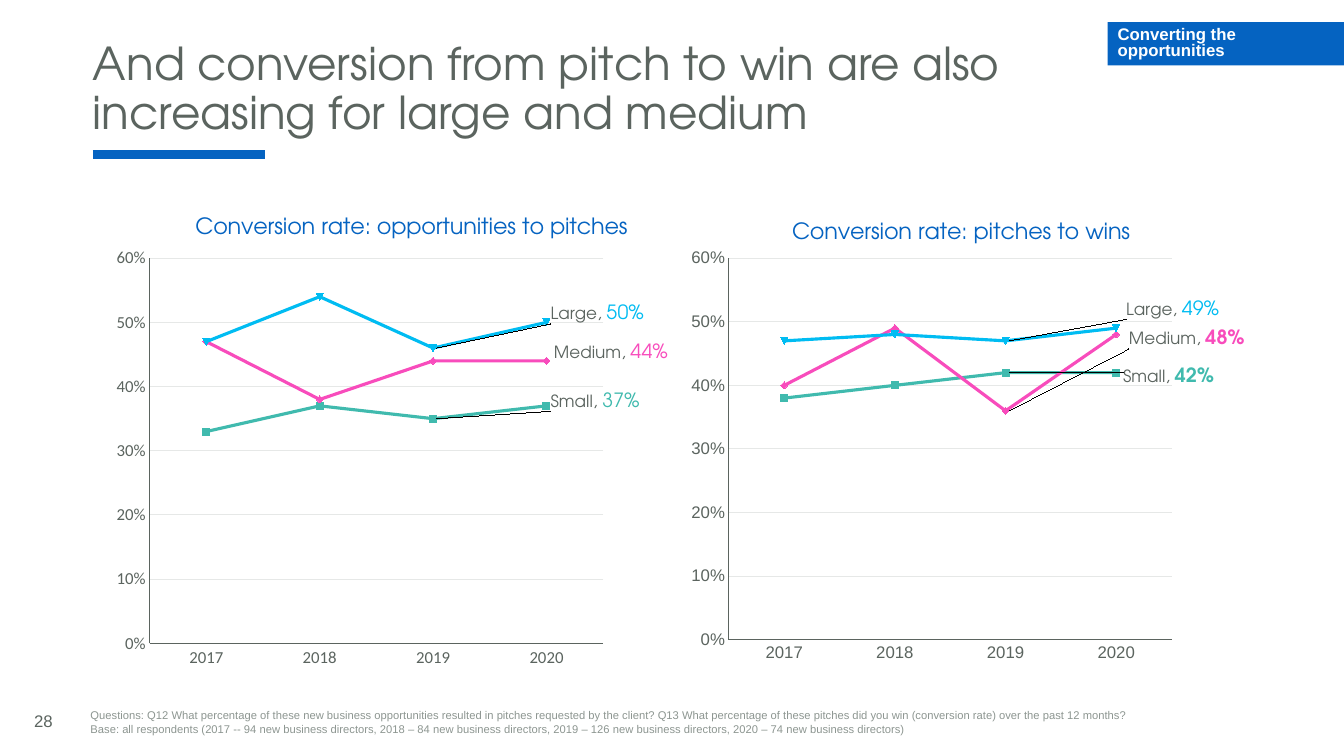
from dataclasses import dataclass

from lxml.etree import SubElement
from pptx import Presentation
from pptx.chart.chart import Chart
from pptx.chart.data import CategoryChartData
from pptx.dml.color import RGBColor
from pptx.enum.chart import XL_CHART_TYPE, XL_LABEL_POSITION, XL_TICK_MARK
from pptx.enum.shapes import MSO_CONNECTOR
from pptx.enum.text import MSO_ANCHOR, MSO_AUTO_SIZE, PP_ALIGN
from pptx.oxml import parse_xml
from pptx.oxml.ns import nsdecls, qn
from pptx.shapes.base import BaseShape
from pptx.slide import Slide
from pptx.text.text import TextFrame, _Paragraph
from pptx.util import Cm, Pt


@dataclass(frozen=True)
class Theme:
    blue: str = "0563C1"
    gray: str = "5B645F"
    pale_gray: str = "8D9691"
    grid: str = "E6E8E7"
    white: str = "FFFFFF"
    teal: str = "40BAAE"
    pink: str = "F84CBC"
    cyan: str = "00BCF2"
    display: str = "TeX Gyre Adventor"
    plain: str = "Arial"
    chart: str = "Calibri"
    title_size: float = 32.4
    heading_size: float = 16
    value_size: float = 14
    text_size: float = 12
    note_size: float = 8


THEME = Theme()


@dataclass(frozen=True)
class Trend:
    name: str
    color: str
    values: tuple[float, ...]
    point: int  # index of the labelled point
    offset: tuple[float, float]  # label shift, as a share of the chart
    bold: bool = False


@dataclass(frozen=True)
class Panel:
    title: str
    title_at: tuple[float, float]
    box: tuple[float, float, float, float]
    plot: tuple[float, float, float, float]
    axis_font: str
    trends: tuple[Trend, ...]


YEARS = ("2017", "2018", "2019", "2020")
PANELS = (
    Panel("Conversion rate: pitches to wins", (0.2, 0.03), (16.94, 5.08, 14.6, 11.99),
          (0.098, 0.119, 0.764, 0.802), THEME.plain, (
              Trend("Small", THEME.teal, (0.38, 0.4, 0.42, 0.42), 2, (0.19, 0.01), True),
              Trend("Medium", THEME.pink, (0.4, 0.49, 0.36, 0.48), 2, (0.2, -0.15), True),
              Trend("Large", THEME.cyan, (0.47, 0.48, 0.47, 0.49), 2, (0.195, -0.065)))),
    Panel("Conversion rate: opportunities to pitches", (0.17, 0.02), (2.34, 5.08, 14.6, 12.09),
          (0.098, 0.118, 0.783, 0.803), THEME.chart, (
              Trend("Small", THEME.teal, (0.33, 0.37, 0.35, 0.37), 2, (0.19, -0.035)),
              Trend("Medium", THEME.pink, (0.47, 0.38, 0.44, 0.44), 3, (0, -0.015)),
              Trend("Large", THEME.cyan, (0.47, 0.54, 0.46, 0.5), 2, (0.19, -0.07)))),
)
FOOTNOTES = (
    "Questions: Q12 What percentage of these new business opportunities resulted in pitches "
    "requested by the client? Q13 What percentage of these pitches did you win (conversion rate) "
    "over the past 12 months?",
    "Base: all respondents (2017 -- 94 new business directors, 2018 – 84 new business directors, "
    "2019 – 126 new business directors, 2020 – 74 new business directors)",
)


def set_font(font, *, size: float, color: str, name: str, bold: bool = False) -> None:
    font.size, font.name, font.bold = Pt(size), name, bold
    font.color.rgb = RGBColor.from_string(color)


def add_text(paragraph: _Paragraph, text: str, *, size: float = THEME.text_size,
             color: str = THEME.gray, name: str = THEME.plain, bold: bool = False) -> None:
    run = paragraph.add_run()
    run.text = text
    set_font(run.font, size=size, color=color, name=name, bold=bold)


def place(shape: BaseShape, left: float, top: float, width: float, height: float) -> None:
    shape.left, shape.top, shape.width, shape.height = Cm(left), Cm(top), Cm(width), Cm(height)


def prepare_frame(frame: TextFrame, anchor: MSO_ANCHOR, spacing: float = 1) -> _Paragraph:
    frame.word_wrap, frame.auto_size = True, MSO_AUTO_SIZE.NONE
    frame.vertical_anchor = anchor
    paragraph = frame.paragraphs[0]
    paragraph.alignment, paragraph.line_spacing = PP_ALIGN.LEFT, spacing
    paragraph.space_before = Pt(0)
    return paragraph


def manual_layout(**settings: str | float):
    parts = "".join(f'<c:{key} val="{value}"/>' for key, value in settings.items())
    return parse_xml(f'<c:layout {nsdecls("c")}><c:manualLayout>{parts}</c:manualLayout></c:layout>')


def set_layout(parent, position: int, **settings: str | float) -> None:
    for old in parent.findall(qn("c:layout")):
        parent.remove(old)
    parent.insert(position, manual_layout(**settings))


def style_axes(chart: Chart, font_name: str) -> None:
    for axis in (chart.category_axis, chart.value_axis):
        axis.major_tick_mark = axis.minor_tick_mark = XL_TICK_MARK.NONE
        set_font(axis.tick_labels.font, size=THEME.text_size, color=THEME.gray, name=font_name)
        axis.format.line.width = Pt(0.75)
        axis.format.line.color.rgb = RGBColor.from_string(THEME.gray)
    axis = chart.value_axis
    axis.minimum_scale, axis.maximum_scale, axis.major_unit = 0, 0.6, 0.1
    axis.tick_labels.number_format, axis.tick_labels.number_format_is_linked = "0%", False
    axis.major_gridlines.format.line.width = Pt(0.75)
    axis.major_gridlines.format.line.color.rgb = RGBColor.from_string(THEME.grid)


def style_series(series, trend: Trend) -> None:
    series.smooth = False
    series.marker.style = None
    series.format.line.width = Pt(2.25)
    series.format.line.color.rgb = RGBColor.from_string(trend.color)
    series.data_labels.show_value = False

    label = series.points[trend.point].data_label
    label.position = XL_LABEL_POSITION.RIGHT
    frame = label.text_frame
    frame.word_wrap = False
    add_text(frame.paragraphs[0], f"{trend.name}, ", name=THEME.display)
    add_text(frame.paragraphs[0], f"{trend.values[-1]:.0%}", size=THEME.value_size,
             color=trend.color, name=THEME.display, bold=trend.bold)


def add_panel(slide: Slide, panel: Panel) -> None:
    data = CategoryChartData(number_format="0%")
    data.categories = YEARS
    for trend in panel.trends:
        data.add_series(trend.name, trend.values)
    box = (Cm(length) for length in panel.box)
    chart = slide.shapes.add_chart(XL_CHART_TYPE.LINE, *box, data).chart
    chart.has_legend = False
    set_font(chart.font, size=10, color=THEME.gray, name=THEME.chart)
    chart.plots[0].vary_by_categories = False
    style_axes(chart, panel.axis_font)

    # Title and plot area
    chart.has_title = True
    add_text(chart.chart_title.text_frame.paragraphs[0], panel.title,
             size=THEME.heading_size, color=THEME.blue, name=THEME.display)
    left, top = panel.title_at
    set_layout(chart.element.xpath("c:chart/c:title")[0], 1,
               xMode="edge", yMode="edge", x=left, y=top)
    left, top, width, height = panel.plot
    set_layout(chart.element.xpath("c:chart/c:plotArea")[0], 0, layoutTarget="inner",
               xMode="edge", yMode="edge", x=left, y=top, w=width, h=height)

    # Lines, end labels and leader lines
    for series, trend in zip(chart.plots[0].series, panel.trends):
        style_series(series, trend)
    for labels, trend in zip(chart.element.xpath(".//c:ser/c:dLbls"), panel.trends):
        set_layout(labels.find(qn("c:dLbl")), 1, x=trend.offset[0], y=trend.offset[1])
        namespace = "http://schemas.microsoft.com/office/drawing/2012/chart"
        extension = SubElement(SubElement(labels, qn("c:extLst")), qn("c:ext"),
                               uri="{CE6537A1-D6FC-4f65-9D91-7224C49458BB}")
        SubElement(extension, f"{{{namespace}}}showLeaderLines", nsmap={"c15": namespace}, val="1")


def add_heading(slide: Slide) -> None:
    # Title and its rule
    title = slide.shapes.title
    place(title, 2.34, 1.02, 25.22, 2.62)
    title.text_frame.margin_left = title.text_frame.margin_right = 0
    add_text(prepare_frame(title.text_frame, MSO_ANCHOR.BOTTOM, 0.9),
             "And conversion from pitch to win are also increasing for large and medium",
             size=THEME.title_size, name=THEME.display)
    rule = slide.shapes.add_connector(MSO_CONNECTOR.STRAIGHT, Cm(2.34), Cm(3.89), Cm(6.68), Cm(3.89))
    rule.line.width = Pt(6)
    rule.line.color.rgb = RGBColor.from_string(THEME.blue)
    SubElement(rule.element.spPr, qn("a:effectLst"))

    # Section badge
    badge = slide.placeholders[1]
    place(badge, 27.91, 0.56, 5.96, 1.09)
    badge.fill.solid()
    badge.fill.fore_color.rgb = RGBColor.from_string(THEME.blue)
    paragraph = prepare_frame(badge.text_frame, MSO_ANCHOR.MIDDLE, 0.8)
    properties = paragraph._p.get_or_add_pPr()
    properties.set("marL", "0")
    properties.set("indent", "0")
    SubElement(properties, qn("a:buNone"))
    add_text(paragraph, "Converting the opportunities", color=THEME.white, bold=True)


def add_footer(slide: Slide) -> None:
    number = slide.shapes.add_textbox(Cm(0.61), Cm(17.65), Cm(11.43), Cm(1.02))
    add_text(prepare_frame(number.text_frame, MSO_ANCHOR.MIDDLE), "28")
    notes = slide.shapes.add_textbox(Cm(2.03), Cm(17.73), Cm(28.07), Cm(0.94)).text_frame
    paragraph = prepare_frame(notes, MSO_ANCHOR.TOP)
    for index, text in enumerate(FOOTNOTES):
        paragraph = notes.add_paragraph() if index else paragraph
        add_text(paragraph, text, size=THEME.note_size, color=THEME.pale_gray)


def main() -> None:
    presentation = Presentation()
    presentation.slide_width, presentation.slide_height = Cm(33.87), Cm(19.05)
    slide = presentation.slides.add_slide(presentation.slide_layouts[1])
    add_heading(slide)
    for panel in PANELS:
        add_panel(slide, panel)
    add_footer(slide)
    presentation.save("out.pptx")


if __name__ == "__main__":
    main()
